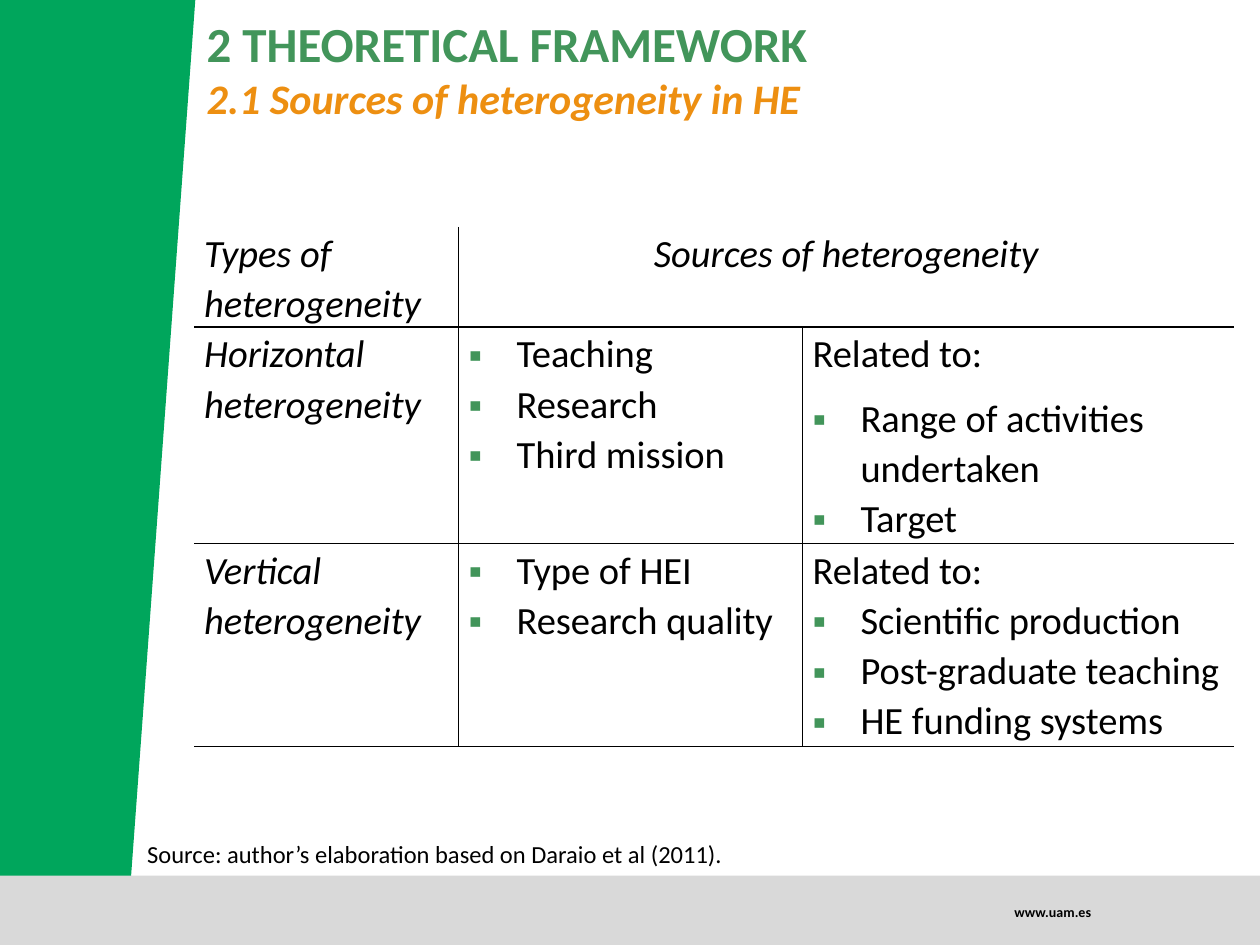
from lxml.etree import SubElement
from pptx import Presentation
from pptx.dml.color import RGBColor
from pptx.enum.shapes import MSO_SHAPE
from pptx.enum.text import MSO_ANCHOR, MSO_AUTO_SIZE, PP_ALIGN
from pptx.oxml.ns import qn
from pptx.util import Inches, Pt

COLORS = {"band": "00A65C", "footer": "D9D9D9", "heading": "42955A",
          "subheading": "ED8F11", "text": "000000", "cell": "FFFFFF"}
FONT = "Calibri"
COLUMNS = [2.1, 2.73, 3.42]
ROWS = [0.55, 1.72, 1.61]

# Each cell is a list of (text, is bullet, points after)
CELLS = [
    [[("Types of heterogeneity", False, 8)],
     [("Sources of heterogeneity", False, 8)],
     []],
    [[("Horizontal heterogeneity", False, 8)],
     [("Teaching", True, 0), ("Research", True, 0), ("Third mission", True, 8)],
     [("Related to:", False, 8), ("Range of activities undertaken", True, 0),
      ("Target", True, 0)]],
    [[("Vertical heterogeneity", False, 8)],
     [("Type of HEI", True, 0), ("Research quality", True, 8)],
     [("Related to:", False, 0), ("Scientific production", True, 0),
      ("Post-graduate teaching", True, 0), ("HE funding systems", True, 8)]],
]


def rgb(name):
    return RGBColor.from_string(COLORS[name])


def add_text(tf, text, first=True, size=22, color="text", bold=False,
             italic=False, align=PP_ALIGN.LEFT):
    p = tf.paragraphs[0] if first else tf.add_paragraph()
    p.alignment = align
    r = p.add_run()
    r.text = text
    r.font.name = FONT
    r.font.size = Pt(size)
    r.font.bold = bold
    r.font.italic = italic
    r.font.color.rgb = rgb(color)
    return p


def add_bullet(p):
    pPr = p._p.get_or_add_pPr()
    pPr.set("marL", str(Inches(0.38)))
    pPr.set("indent", str(-Inches(0.38)))
    clr = SubElement(pPr, qn("a:buClr"))
    SubElement(clr, qn("a:srgbClr"), val=COLORS["heading"])
    SubElement(pPr, qn("a:buFont"), typeface="Arial")
    SubElement(pPr, qn("a:buChar"), char="▪")


def set_borders(cell, visible):
    tcPr = cell._tc.get_or_add_tcPr()
    for side in "LRTB":
        ln = SubElement(tcPr, qn("a:ln" + side), w=str(Pt(1)))
        if side in visible:
            fill = SubElement(ln, qn("a:solidFill"))
            SubElement(fill, qn("a:srgbClr"), val=COLORS["text"])
        else:
            SubElement(ln, qn("a:noFill"))


def paint(sp, color):
    sp.fill.solid()
    sp.fill.fore_color.rgb = rgb(color)
    sp.line.fill.background()
    sp.shadow.inherit = False


def add_label(s, box, text, anchor=MSO_ANCHOR.TOP, **fmt):
    tf = s.shapes.add_textbox(*map(Inches, box)).text_frame
    tf.word_wrap = True
    tf.auto_size = MSO_AUTO_SIZE.SHAPE_TO_FIT_TEXT
    tf.vertical_anchor = anchor
    add_text(tf, text, **fmt)


def add_side_band(s, left, top, width, height):
    fb = s.shapes.build_freeform(Inches(left), Inches(top))
    fb.add_line_segments([(Inches(left + x), Inches(top + y)) for x, y in
                          [(width, 0), (1.04, height), (0, height)]])
    paint(fb.convert_to_shape(), "band")


def add_footer(s, left, top, width, height):
    sp = s.shapes.add_shape(MSO_SHAPE.RECTANGLE,
                            *map(Inches, (left, top, width, height)))
    paint(sp, "footer")
    add_label(s, (left + 7.53, top + 0.17, 1.23, 0.24), "www.uam.es",
              anchor=MSO_ANCHOR.MIDDLE, size=8, bold=True,
              align=PP_ALIGN.RIGHT)


def add_heading(s, left, top, width, height):
    sp = s.shapes.title
    sp.left, sp.top, sp.width, sp.height = map(
        Inches, (left, top, width, height))
    tf = sp.text_frame
    tf.auto_size = MSO_AUTO_SIZE.NONE
    tf.vertical_anchor = MSO_ANCHOR.TOP
    add_text(tf, "2 THEORETICAL FRAMEWORK", size=28, color="heading", bold=True)
    add_text(tf, "2.1 Sources of heterogeneity in HE", first=False, size=24,
             color="subheading", bold=True, italic=True)


def fill_cell(cell, row, col, items):
    cell.margin_left = cell.margin_right = Inches(0.08)
    cell.margin_top, cell.margin_bottom = Inches(0.01), 0
    # Only inner lines and the bottom edge are drawn
    set_borders(cell, "B" + "T" * (row > 0) + "L" * (col > 0)
                + "R" * (col < 2 and (row, col) != (0, 1)))
    cell.fill.solid()
    cell.fill.fore_color.rgb = rgb("cell")
    align = PP_ALIGN.CENTER if (row, col) == (0, 1) else PP_ALIGN.LEFT
    for i, (text, bullet, after) in enumerate(items):
        p = add_text(cell.text_frame, text, first=i == 0,
                     italic=row == 0 or col == 0, align=align)
        p.line_spacing = 1.07
        p.space_after = Pt(after)
        if bullet:
            add_bullet(p)


def add_sources_table(s, left, top):
    box = map(Inches, (left, top, sum(COLUMNS), sum(ROWS)))
    table = s.shapes.add_table(len(ROWS), len(COLUMNS), *box).table
    table.first_row = table.horz_banding = False
    for column, width in zip(table.columns, COLUMNS):
        column.width = Inches(width)
    for row, height in zip(table.rows, ROWS):
        row.height = Inches(height)
    table.cell(0, 1).merge(table.cell(0, 2))
    for i, row in enumerate(CELLS):
        for j, items in enumerate(row):
            fill_cell(table.cell(i, j), i, j, items)


def main():
    prs = Presentation()
    prs.slide_width, prs.slide_height = Inches(10), Inches(7.5)
    s = prs.slides.add_slide(prs.slide_layouts[5])
    # Frame
    add_side_band(s, 0, 0, 1.55, 6.96)
    add_footer(s, 0, 6.95, 10, 0.55)
    # Content
    add_heading(s, 1.54, 0.06, 8.46, 0.98)
    add_sources_table(s, 1.54, 1.8)
    add_label(s, (1.07, 6.61, 6.93, 0.34),
              "Source: author’s elaboration based on Daraio et al (2011).",
              size=14)
    prs.save("out.pptx")


if __name__ == "__main__":
    main()
